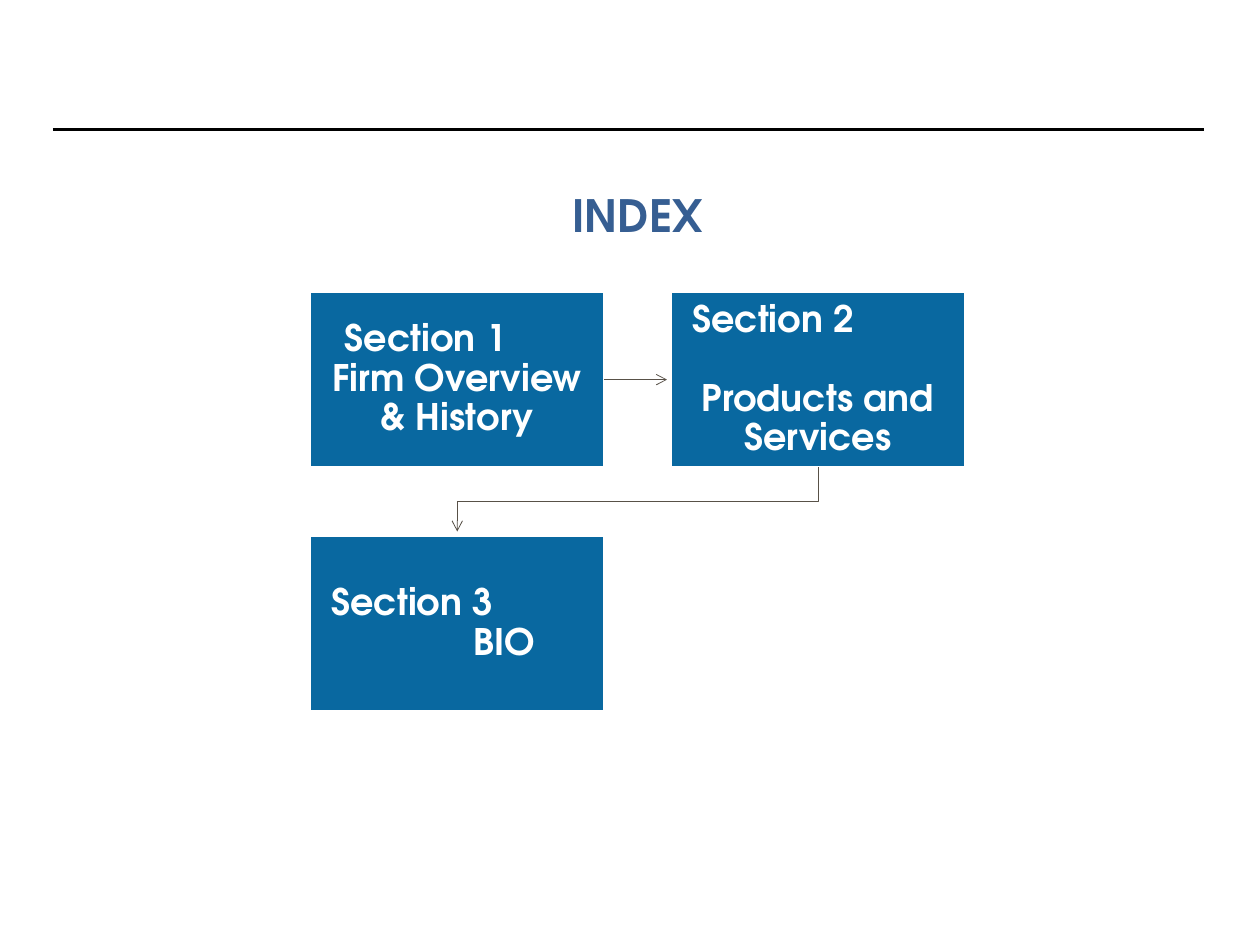
from lxml import etree
from pptx import Presentation
from pptx.dml.color import RGBColor
from pptx.enum.shapes import MSO_CONNECTOR, MSO_SHAPE
from pptx.enum.text import MSO_ANCHOR, PP_ALIGN
from pptx.oxml.ns import qn
from pptx.util import Cm, Pt

STRAIGHT = MSO_CONNECTOR.STRAIGHT
RECTANGLE = MSO_SHAPE.RECTANGLE
MIDDLE = MSO_ANCHOR.MIDDLE
LEFT, CENTER = PP_ALIGN.LEFT, PP_ALIGN.CENTER
FONT = "TeX Gyre Adventor"
BLUE, TITLE_BLUE, ARROW, WHITE, BLACK = "0968A0", "365E92", "585148", "FFFFFF", "000000"

TITLE = "INDEX"
# column, row, then paragraphs: text, alignment, indent in cm, space before in pt
SECTIONS = [
    (0, 0, [("Section 1", LEFT, 0.3, 0), ("Firm Overview & History", CENTER, 0, 0)]),
    (1, 0, [("Section 2", LEFT, 0, 0), ("Products and Services", CENTER, 0, 24.8)]),
    (0, 1, [("Section 3", LEFT, 0, 0), ("BIO", LEFT, 3.15, 0)]),
]
BOX_LEFT, BOX_TOP, BOX_W, BOX_H = 6.89, 6.48, 6.5, 3.88
STEP_X, STEP_Y = 8.0, 5.41
ARROW_GAP = 0.1


def rgb(color):
    return RGBColor.from_string(color)


def format_font(font, size, color):
    values = {"name": FONT, "size": Pt(size), "bold": True}
    for name, value in values.items():
        setattr(font, name, value)
    font.color.rgb = rgb(color)


def format_line(sp, color, width, arrow=False):
    sp.line.color.rgb = rgb(color)
    sp.line.width = Pt(width)
    if arrow:
        ln = sp.line._get_or_add_ln()
        etree.SubElement(ln, qn("a:tailEnd"), type="arrow")


def add_line(slide, x1, y1, x2, y2):
    line = slide.shapes.add_connector(STRAIGHT, Cm(x1), Cm(y1), Cm(x2), Cm(y2))
    etree.SubElement(line._element.spPr, qn("a:effectLst"))
    return line


def add_section(slide, column, row, paragraphs):
    sp = slide.shapes.add_shape(
        RECTANGLE, Cm(BOX_LEFT + column * STEP_X), Cm(BOX_TOP + row * STEP_Y),
        Cm(BOX_W), Cm(BOX_H))
    sp.shadow.inherit = False
    sp.fill.solid()
    sp.fill.fore_color.rgb = rgb(BLUE)
    format_line(sp, WHITE, 1)
    tf = sp.text_frame
    tf.word_wrap = True
    tf.vertical_anchor = MIDDLE
    for side in ("left", "top", "right", "bottom"):
        setattr(tf, f"margin_{side}", Cm(0.46))
    for i, (text, alignment, indent, before) in enumerate(paragraphs):
        p = tf.paragraphs[0] if i == 0 else tf.add_paragraph()
        p.alignment = alignment
        p.line_spacing = 0.9
        if before:
            p.space_before = Pt(before)
        if indent:
            p._p.get_or_add_pPr().set("marL", str(Cm(indent)))
        r = p.add_run()
        r.text = text
        format_font(r.font, 23, WHITE)
    return sp


def main():
    prs = Presentation()
    prs.slide_width, prs.slide_height = Cm(27.94), Cm(20.96)
    slide = prs.slides.add_slide(prs.slide_layouts[5])

    title = slide.shapes.title
    title.left, title.top, title.width, title.height = Cm(0.18), Cm(4.04), Cm(27.91), Cm(1.45)
    title.text_frame.text = TITLE
    title.text_frame.vertical_anchor = MIDDLE
    p = title.text_frame.paragraphs[0]
    p.alignment = CENTER
    format_font(p.runs[0].font, 28, TITLE_BLUE)

    format_line(add_line(slide, 1.17, 2.87, 26.7, 2.87), BLACK, 2)

    boxes = [add_section(slide, *section) for section in SECTIONS]

    middle = BOX_TOP + BOX_H / 2
    across = add_line(slide, BOX_LEFT + BOX_W, middle, BOX_LEFT + STEP_X - ARROW_GAP, middle)
    across.begin_connect(boxes[0], 3)
    format_line(across, ARROW, 0.5, arrow=True)

    end_x = BOX_LEFT + BOX_W / 2
    start_x = end_x + STEP_X
    start_y, end_y = BOX_TOP + BOX_H, BOX_TOP + STEP_Y
    turn_y = (start_y + end_y) / 2
    bend = [(start_x, turn_y), (end_x, turn_y), (end_x, end_y - ARROW_GAP)]
    builder = slide.shapes.build_freeform(Cm(start_x), Cm(start_y))
    builder.add_line_segments([(Cm(x), Cm(y)) for x, y in bend], close=False)
    down = builder.convert_to_shape()
    down.shadow.inherit = False
    down.fill.background()
    format_line(down, ARROW, 0.5, arrow=True)

    prs.save("out.pptx")


if __name__ == "__main__":
    main()
